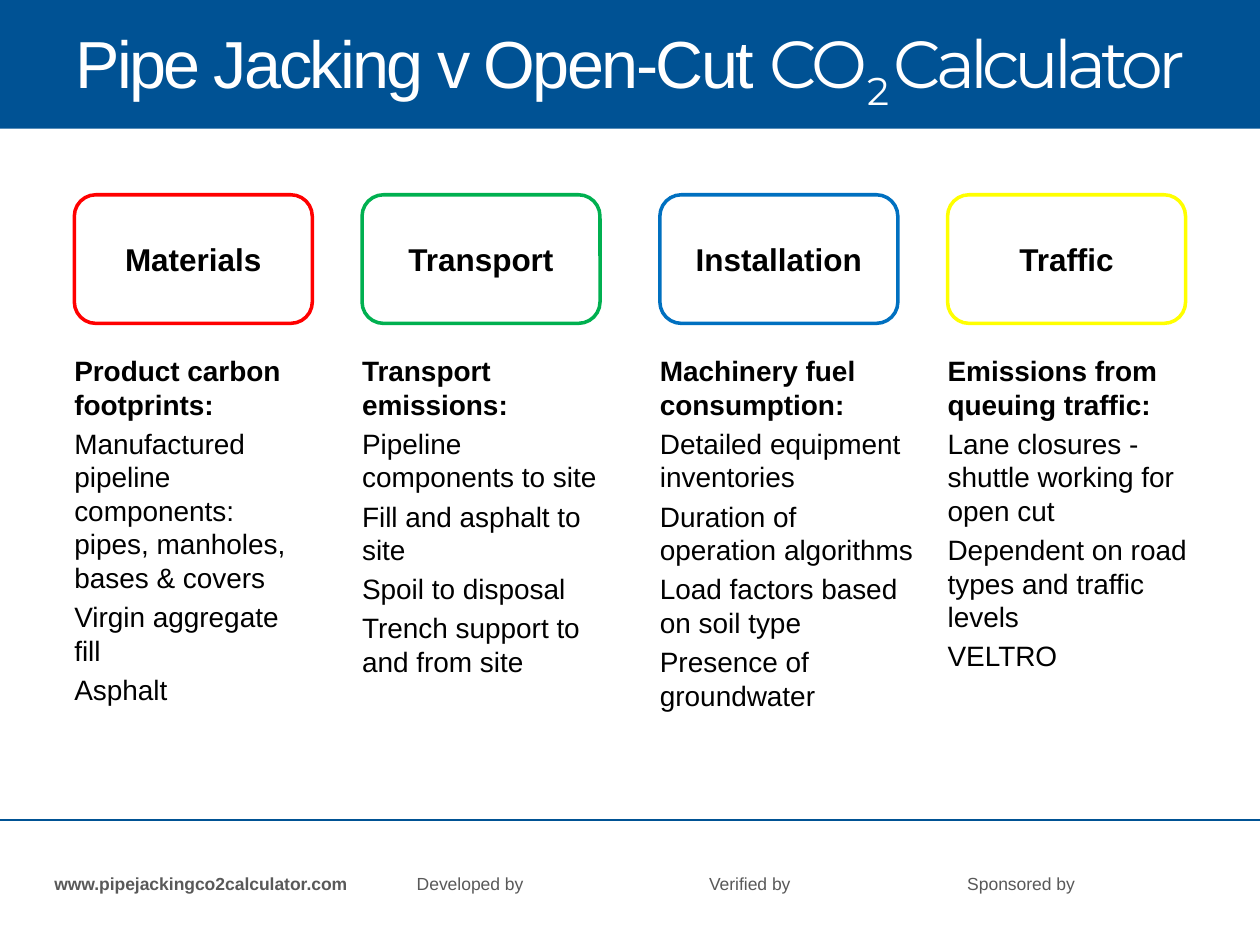
from lxml import etree
from pptx import Presentation
from pptx import util as u
from pptx.dml.color import RGBColor
from pptx.enum import shapes, text
from pptx.oxml.ns import qn

THEME = {
    "font": "Arial", "display": "Montserrat",
    "blue": "005294", "white": "FFFFFF", "black": "000000", "grey": "595959",
    "title": 38, "label": 18, "body": 16, "footer": 10,
    "body_pitch": 19.2, "body_gap": 3.2,
}

TITLE_RUNS = [
    ("Pipe Jacking v Open-Cut ", THEME["font"], -150, 0),
    ("CO", THEME["display"], -300, 0),
    ("2 ", THEME["display"], -300, -25000),
    ("Calculator", THEME["display"], -300, 0),
]

COLUMNS = [
    {"label": "Materials", "colour": "FF0000", "left": 42.5, "text_width": 136,
     "heading": "Product carbon footprints:",
     "items": ["Manufactured pipeline components: pipes, manholes, bases & covers",
               "Virgin aggregate fill", "Asphalt"]},
    {"label": "Transport", "colour": "00B050", "left": 206.9, "text_width": 142,
     "heading": "Transport emissions:",
     "items": ["Pipeline components to site", "Fill and asphalt to site",
               "Spoil to disposal", "Trench support to and from site"]},
    {"label": "Installation", "colour": "0070C0", "left": 377.1, "text_width": 147.6,
     "heading": "Machinery fuel consumption:",
     "items": ["Detailed equipment inventories", "Duration of operation algorithms",
               "Load factors based on soil type", "Presence of groundwater"]},
    {"label": "Traffic", "colour": "FFFF00", "left": 541.5, "text_width": 147.6,
     "heading": "Emissions from queuing traffic:",
     "items": ["Lane closures - shuttle working for open cut",
               "Dependent on road types and traffic levels", "VELTRO"]},
]

LEFT, CENTRE = text.PP_ALIGN.LEFT, text.PP_ALIGN.CENTER
MIDDLE, TOP = text.MSO_ANCHOR.MIDDLE, text.MSO_ANCHOR.TOP

FOOTERS = [
    ("www.pipejackingco2calculator.com", 31, 170, LEFT, True),
    ("Developed by", 229.7, 77.8, CENTRE, False),
    ("Verified by", 389.5, 77.8, CENTRE, False),
    ("Sponsored by", 540.9, 85, CENTRE, False),
]

SLIDE_WIDTH, SLIDE_HEIGHT = 720, 540
BANNER_HEIGHT = 73.5
CARD_TOP, CARD_WIDTH, CARD_HEIGHT = 111.3, 136, 73.5
BODY_TOP, BODY_HEIGHT = 202, 312
RULE_TOP = 468.6
FOOTER_TOP, FOOTER_HEIGHT = 499, 12.2


def points(*values):
    return [u.Pt(value) for value in values]


def colour(name):
    return RGBColor.from_string(THEME.get(name, name))


def prepare(shape, anchor=TOP, wrap=True):
    frame = shape.text_frame
    frame.word_wrap = wrap
    frame.auto_size = text.MSO_AUTO_SIZE.NONE
    frame.vertical_anchor = anchor
    frame.margin_left = frame.margin_right = frame.margin_top = frame.margin_bottom = 0
    return frame


def write(paragraph, words, size="body", font="font", ink="black", bold=False,
          align=LEFT, spacing=0, baseline=0):
    paragraph.alignment = align
    run = paragraph.add_run()
    run.text = words
    run.font.name = THEME.get(font, font)
    run.font.size = u.Pt(THEME[size])
    run.font.bold = bold
    run.font.color.rgb = colour(ink)
    properties = run.font._element
    if spacing:
        properties.set("spc", str(spacing))
    if baseline:
        properties.set("baseline", str(baseline))


def add_banner(slide):
    title = slide.shapes.title
    title.left, title.top, title.width, title.height = points(0, 0, SLIDE_WIDTH, BANNER_HEIGHT)
    title.fill.solid()
    title.fill.fore_color.rgb = colour("blue")
    paragraph = prepare(title, MIDDLE).paragraphs[0]
    paragraph.line_spacing = 0.9
    for words, font, spacing, baseline in TITLE_RUNS:
        write(paragraph, words, size="title", font=font, ink="white", align=CENTRE,
              spacing=spacing, baseline=baseline)


def add_card(slide, column):
    card = slide.shapes.add_shape(
        shapes.MSO_SHAPE.ROUNDED_RECTANGLE,
        *points(column["left"], CARD_TOP, CARD_WIDTH, CARD_HEIGHT))
    card.shadow.inherit = False
    card.fill.solid()
    card.fill.fore_color.rgb = colour("white")
    card.line.color.rgb = colour(column["colour"])
    card.line.width = u.Pt(2)
    write(prepare(card, MIDDLE).paragraphs[0], column["label"], size="label",
          bold=True, align=CENTRE)


def add_details(slide, column):
    box = slide.shapes.add_textbox(
        *points(column["left"], BODY_TOP, column["text_width"], BODY_HEIGHT))
    frame = prepare(box)
    for index, words in enumerate([column["heading"], *column["items"]]):
        paragraph = frame.add_paragraph() if index else frame.paragraphs[0]
        paragraph.line_spacing = u.Pt(THEME["body_pitch"])
        paragraph.space_before = u.Pt(THEME["body_gap"] if index else 0)
        write(paragraph, words, bold=index == 0)


def add_footer(slide):
    rule = slide.shapes.add_connector(
        shapes.MSO_CONNECTOR.STRAIGHT, *points(0, RULE_TOP, SLIDE_WIDTH, RULE_TOP))
    rule.line.color.rgb = colour("blue")
    rule.line.width = u.Pt(1)
    etree.SubElement(rule._element.spPr, qn("a:effectLst"))
    for words, left, width, align, bold in FOOTERS:
        box = slide.shapes.add_textbox(*points(left, FOOTER_TOP, width, FOOTER_HEIGHT))
        write(prepare(box, MIDDLE).paragraphs[0], words, size="footer", ink="grey",
              bold=bold, align=align)


def main():
    presentation = Presentation()
    presentation.slide_width, presentation.slide_height = points(SLIDE_WIDTH, SLIDE_HEIGHT)
    slide = presentation.slides.add_slide(presentation.slide_layouts[5])
    add_banner(slide)
    add_footer(slide)
    for column in COLUMNS:
        add_card(slide, column)
        add_details(slide, column)
    presentation.save("out.pptx")


if __name__ == "__main__":
    main()
